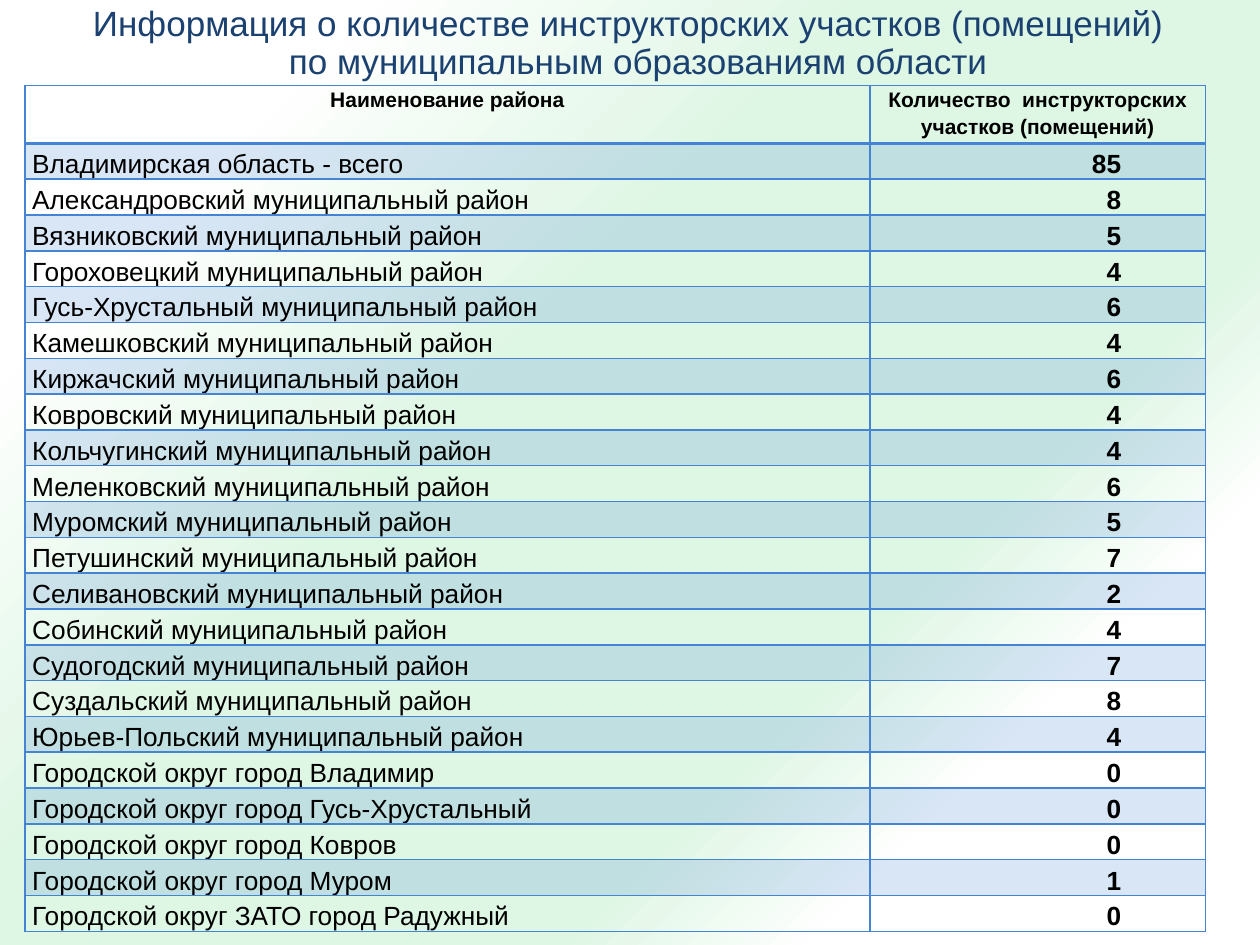
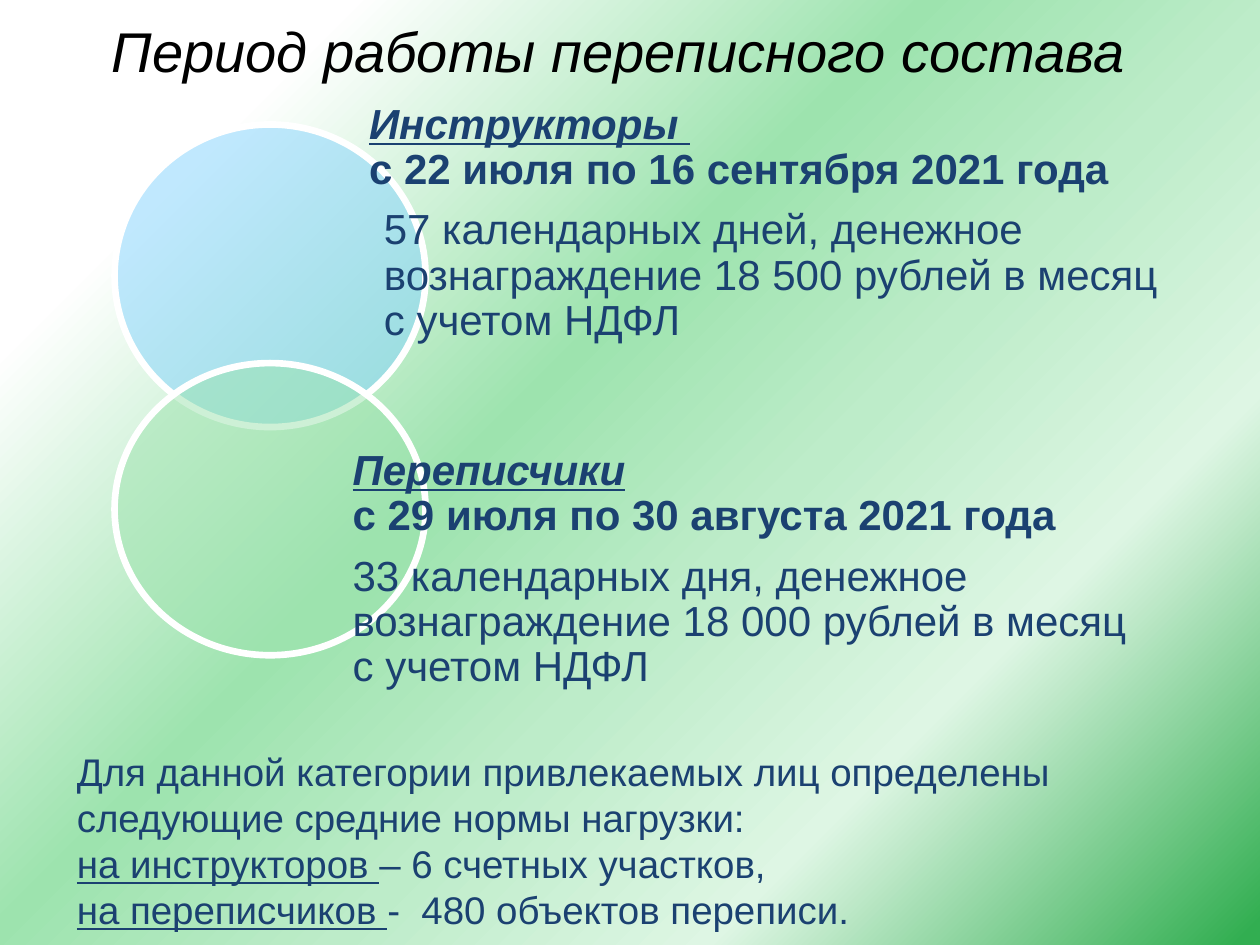
from dataclasses import dataclass

import pptx
import pptx.dml.color
import pptx.enum.shapes
import pptx.enum.text
import pptx.oxml
import pptx.oxml.ns
import pptx.util

Cm = pptx.util.Cm
Pt = pptx.util.Pt
ALIGN = pptx.enum.text.PP_ALIGN
ANCHOR = pptx.enum.text.MSO_ANCHOR
QN = pptx.oxml.ns.qn


@dataclass(frozen=True)
class Theme:
    """Colours, font and type sizes that the slides share."""
    font: str = "Arial"
    navy: str = "1B4171"
    black: str = "000000"
    white: str = "FFFFFF"
    grid: str = "4584D3"
    sky: str = "83D3FE"
    mint: str = "9DE3AE"
    pale: str = "DEF6E4"
    soft: str = "BDECC9"
    green: str = "32AE51"
    head: int = 20
    big: int = 32
    term: int = 24
    note: int = 22
    label: int = 12
    cell: int = 15


THEME = Theme()

AREAS = [
    ("Владимирская область - всего", 85),
    ("Александровский муниципальный район", 8),
    ("Вязниковский муниципальный район", 5),
    ("Гороховецкий муниципальный район", 4),
    ("Гусь-Хрустальный муниципальный район", 6),
    ("Камешковский муниципальный район", 4),
    ("Киржачский муниципальный район", 6),
    ("Ковровский муниципальный район", 4),
    ("Кольчугинский муниципальный район", 4),
    ("Меленковский муниципальный район", 6),
    ("Муромский муниципальный район", 5),
    ("Петушинский муниципальный район", 7),
    ("Селивановский муниципальный район", 2),
    ("Собинский муниципальный район", 4),
    ("Судогодский муниципальный район", 7),
    ("Суздальский муниципальный район", 8),
    ("Юрьев-Польский муниципальный район", 4),
    ("Городской округ город Владимир", 0),
    ("Городской округ город Гусь-Хрустальный", 0),
    ("Городской округ город Ковров", 0),
    ("Городской округ город Муром", 1),
    ("Городской округ ЗАТО город Радужный", 0),
]


def rgb(code):
    """Return the colour for a hex code."""
    return pptx.dml.color.RGBColor.from_string(code)


def place(shape, box):
    """Set left, top, width and height in centimetres."""
    shape.left, shape.top, shape.width, shape.height = map(Cm, box)


def tint(fill, node, color, alpha):
    """Fill with a colour of the given opacity in percent."""
    fill.solid()
    fill.fore_color.rgb = rgb(color)
    tone = node.find(QN("a:solidFill")).find(QN("a:srgbClr"))
    tone.append(pptx.oxml.parse_xml(
        f'<a:alpha {pptx.oxml.ns.nsdecls("a")} val="{alpha * 1000}"/>'))


def shade(slide, stops):
    """Paint the background with a diagonal gradient."""
    fill = slide.background.fill
    fill.gradient()
    fill.gradient_angle = 315
    chain = next(slide.element.iter(QN("a:gsLst")))
    for old in list(chain):
        chain.remove(old)
    for pos, color in stops:
        chain.append(pptx.oxml.parse_xml(
            f'<a:gs {pptx.oxml.ns.nsdecls("a")} pos="{pos * 1000}">'
            f'<a:srgbClr val="{color}"/></a:gs>'))


def write(para, text, size, color=THEME.navy, bold=False, slant=False, line=False):
    """Add text to a paragraph, one run for each line."""
    for num, part in enumerate(text.split("\n")):
        if num:
            para.add_line_break()
        if part:
            run = para.add_run()
            run.text = part
            font = run.font
            font.name, font.size = THEME.font, Pt(size)
            font.bold, font.italic, font.underline = bold, slant, line
            font.color.rgb = rgb(color)


def frame(shape, pad, anchor=ANCHOR.TOP):
    """Prepare the text frame of a shape and return it."""
    body = shape.text_frame
    body.word_wrap = True
    body.auto_size = pptx.enum.text.MSO_AUTO_SIZE.NONE
    body.vertical_anchor = anchor
    body.margin_left = body.margin_right = Cm(pad[0])
    body.margin_top = body.margin_bottom = Cm(pad[1])
    return body


def title(slide, box, text, size, align, space=1.0, **style):
    """Place the title and write its text."""
    place(slide.shapes.title, box)
    para = frame(slide.shapes.title, (0.25, 0.13)).paragraphs[0]
    para.alignment, para.line_spacing = align, space
    write(para, text, size, **style)


def block(slide, box, paras, size, pad=(0.25, 0.13), anchor=ANCHOR.TOP,
          space=1.0, after=0, indent=0):
    """Add a text box of paragraphs, each a list of text and style pairs."""
    body = frame(slide.shapes.add_textbox(*map(Cm, box)), pad, anchor)
    for num, runs in enumerate(paras):
        para = body.add_paragraph() if num else body.paragraphs[0]
        para.line_spacing, para.space_after = space, Pt(after)
        if num and indent:
            para._p.get_or_add_pPr().set("marL", str(Cm(indent)))
        for text, style in runs:
            write(para, text, size, **style)


def ring(slide, box, color):
    """Add a translucent circle with a white rim."""
    oval = slide.shapes.add_shape(
        pptx.enum.shapes.MSO_SHAPE.OVAL, *map(Cm, box))
    oval.shadow.inherit = False
    tint(oval.fill, oval.element.spPr, color, 50)
    oval.line.color.rgb = rgb(THEME.white)
    oval.line.width = Pt(3.8)


def edge(cell, base):
    """Draw the four borders of a cell, the lower one of the given width."""
    props = cell._tc.get_or_add_tcPr()
    for num, (side, width) in enumerate(zip("LRTB", (1, 1, 1, base))):
        props.insert(num, pptx.oxml.parse_xml(
            f'<a:ln{side} {pptx.oxml.ns.nsdecls("a")} w="{Pt(width)}">'
            f'<a:solidFill><a:srgbClr val="{THEME.grid}"/></a:solidFill>'
            f'</a:ln{side}>'))


def entry(cell, text, size, align, space, anchor, bold, band=False, base=1, right=0.15):
    """Write and format one table cell."""
    cell.margin_left, cell.margin_right = Cm(0.15), Cm(right)
    cell.margin_top = cell.margin_bottom = 0
    cell.vertical_anchor = anchor
    if band:
        tint(cell.fill, cell._tc.get_or_add_tcPr(), THEME.grid, 20)
    else:
        cell.fill.background()
    edge(cell, base)
    para = cell.text_frame.paragraphs[0]
    para.alignment, para.line_spacing = align, space
    write(para, text, size, THEME.black, bold)


def chart(slide, box, heads, rows, widths, top):
    """Add the table of areas with banded rows."""
    table = slide.shapes.add_table(len(rows) + 1, 2, *map(Cm, box)).table
    table.first_row = table.horz_banding = False
    for col, width in zip(table.columns, widths):
        col.width = Cm(width)
    for row in table.rows:
        row.height = Cm((box[3] - top) / len(rows))
    table.rows[0].height = Cm(top)
    for col, text in enumerate(heads):
        entry(table.cell(0, col), text, THEME.label, ALIGN.CENTER, 1.15,
              ANCHOR.TOP, True, base=2)
    for num, (name, count) in enumerate(rows, 1):
        band = num % 2 == 1
        entry(table.cell(num, 0), name, THEME.cell, ALIGN.LEFT, Pt(16),
              ANCHOR.BOTTOM, False, band)
        entry(table.cell(num, 1), str(count), THEME.cell, ALIGN.RIGHT, Pt(16),
              ANCHOR.BOTTOM, True, band, right=1.7)


def areas(deck):
    """Build the slide with the count of sections by area."""
    slide = deck.slides.add_slide(deck.slide_layouts[5])
    shade(slide, [(16, THEME.white), (40, THEME.pale), (68, THEME.pale),
                  (80, THEME.white), (93, THEME.white)])
    title(slide, (1.17, 0, 23.39, 2.59),
          "Информация о количестве инструкторских участков (помещений)  \n"
          "по муниципальным образованиям области",
          THEME.head, ALIGN.CENTER, 0.9)
    chart(slide, (0.5, 1.72, 23.8, 17.07),
          ("Наименование района",
           "Количество  инструкторских участков (помещений)"),
          AREAS, (17.04, 6.76), 1.17)


def terms(deck):
    """Build the slide with the working periods of the staff."""
    slide = deck.slides.add_slide(deck.slide_layouts[5])
    shade(slide, [(16, THEME.white), (42, THEME.mint), (58, THEME.soft),
                  (75, THEME.pale), (99, THEME.green)])
    title(slide, (2, 0.2, 21.44, 1.63), "Период работы переписного состава",
          THEME.big, ALIGN.LEFT, color=THEME.black, slant=True)
    name = dict(bold=True, slant=True, line=True)
    staff = [
        ((2.31, 2.51, 6.27, 6.1), THEME.sky, (7.44, 2.67, 17.2, 3.68), 0.3,
         "Инструкторы ", "с 22 июля по 16 сентября 2021 года",
         "57 календарных дней, денежное вознаграждение 18 500"),
        ((2.31, 7.32, 6.27, 5.89), THEME.mint, (7.11, 9.09, 17.78, 4.8), 0,
         "Переписчики", "с 29 июля по 30 августа 2021 года",
         "33 календарных дня, денежное вознаграждение 18 000"),
    ]
    for oval, color, box, indent, role, dates, pay in staff:
        ring(slide, oval, color)
        block(slide, box,
              [[(role, name), (" \n" + dates, dict(bold=True))],
               [(pay + " рублей в месяц \nс учетом НДФЛ", {})]],
              THEME.term, (0, 0.08), ANCHOR.MIDDLE, 0.9, 8.5, indent)
    under = dict(line=True)
    block(slide, (1.3, 14.94, 22.81, 4.01),
          [[("Для данной категории привлекаемых лиц определены "
             "следующие средние нормы нагрузки:", {})],
           [("на инструкторов ", under), ("– 6 счетных участков,", {})],
           [("на переписчиков ", under), ("-  480 объектов переписи.", {})]],
          THEME.note)


def main():
    """Build and save the slides."""
    deck = pptx.Presentation()
    deck.slide_width, deck.slide_height = Cm(25.4), Cm(19.05)
    areas(deck)
    terms(deck)
    deck.save("out.pptx")


if __name__ == "__main__":
    main()
